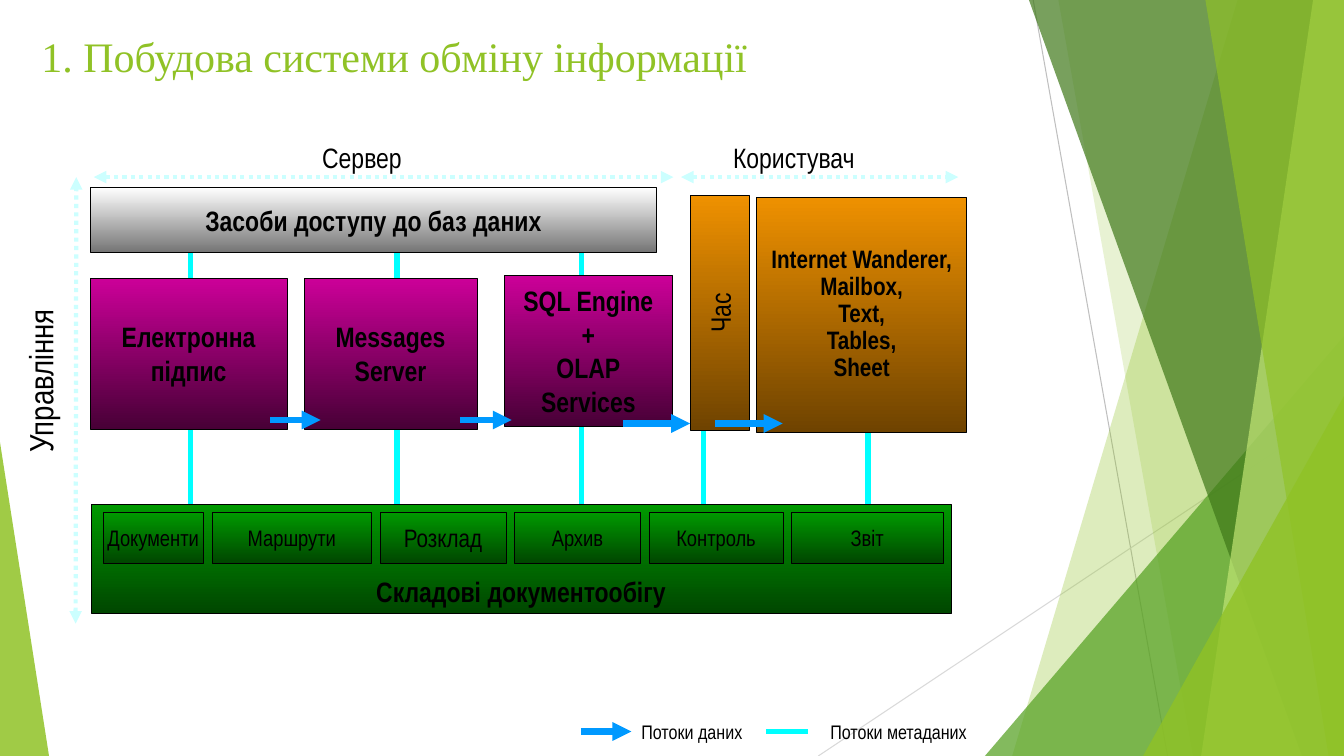
from lxml import etree
from pptx import Presentation
from pptx.dml.color import RGBColor
from pptx.enum.dml import MSO_LINE
from pptx.enum.shapes import MSO_CONNECTOR, MSO_SHAPE
from pptx.enum.text import MSO_ANCHOR, MSO_AUTO_SIZE, PP_ALIGN
from pptx.oxml.ns import qn
from pptx.util import Pt

RECTANGLE = MSO_SHAPE.RECTANGLE
TRIANGLE = MSO_SHAPE.ISOSCELES_TRIANGLE
STRAIGHT = MSO_CONNECTOR.STRAIGHT
DOTTED = MSO_LINE.ROUND_DOT
TOP, MIDDLE, BOTTOM = MSO_ANCHOR.TOP, MSO_ANCHOR.MIDDLE, MSO_ANCHOR.BOTTOM
LEFT, CENTER = PP_ALIGN.LEFT, PP_ALIGN.CENTER
GROW = MSO_AUTO_SIZE.SHAPE_TO_FIT_TEXT

WIDTH, HEIGHT = 960, 540
COLORS = {
    "black": "000000", "lime": "90C226", "leaf": "54A021",
    "forest": "3F7819", "pale": "C0E474", "rule": "BFBFBF",
    "light_rule": "D9D9D9", "data": "0099FF", "metadata": "00FFFF",
    "span": "CCFFFF",
}
GRADIENTS = {
    "green": ("009900", "004700"),
    "gray": ("FFFFFF", "767676"),
    "magenta": ("CC0099", "480036"),
    "orange": ("EF9100", "6F4300"),
}


class Diagram:
    font = "Arial Narrow"

    def __init__(self, page):
        self.page = page
        self.shapes = page.shapes

    def color(self, name):
        return RGBColor.from_string(COLORS[name])

    def tint(self, shape, color, opacity):
        shape.shadow.inherit = False
        shape.line.fill.background()
        shape.fill.solid()
        shape.fill.fore_color.rgb = self.color(color)
        for node in shape._element.spPr.iter(qn("a:srgbClr")):
            etree.SubElement(node, qn("a:alpha"), val=str(opacity * 1000))

    def wedge(self, top_x, bottom_x, color, opacity):
        builder = self.shapes.build_freeform(Pt(top_x), 0)
        corners = [(WIDTH, 0), (WIDTH, HEIGHT), (bottom_x, HEIGHT)]
        builder.add_line_segments([(Pt(x), Pt(y)) for x, y in corners])
        self.tint(builder.convert_to_shape(), color, opacity)

    def triangle(self, left, top, width, apex, color, opacity):
        shape = self.shapes.add_shape(
            TRIANGLE, Pt(left), Pt(top), Pt(width), Pt(HEIGHT - top))
        shape.adjustments[0] = apex
        self.tint(shape, color, opacity)

    def line(self, start, end, color, weight, head=None, tail=None, dotted=False):
        line = self.shapes.add_connector(STRAIGHT, *map(Pt, start + end))
        line.line.color.rgb = self.color(color)
        line.line.width = Pt(weight)
        if dotted:
            line.line.dash_style = DOTTED
        outline = line._element.spPr.find(qn("a:ln"))
        for tag, kind in (("a:headEnd", head), ("a:tailEnd", tail)):
            if kind:
                etree.SubElement(outline, qn(tag), type=kind)
        etree.SubElement(line._element.spPr, qn("a:effectLst"))

    def add_text(self, shape, lines, size, align, anchor, color="black",
                 bold=False, font=None, wrap=True, spacing=None):
        frame = shape.text_frame
        frame.word_wrap = wrap
        frame.vertical_anchor = anchor
        for index, text in enumerate(lines):
            para = frame.paragraphs[0] if index == 0 else frame.add_paragraph()
            para.alignment = align
            if spacing:
                para.line_spacing = spacing
            span = para.add_run()
            span.text = text
            span.font.name = font or self.font
            span.font.size = Pt(size)
            span.font.bold = bold
            span.font.color.rgb = self.color(color)

    def box(self, bounds, gradient, lines, size=20, bold=True, anchor=MIDDLE,
            wrap=False, spacing=None, rotation=0):
        shape = self.shapes.add_shape(RECTANGLE, *map(Pt, bounds))
        shape.shadow.inherit = False
        shape.rotation = rotation
        shape.fill.gradient()
        shape.fill.gradient_angle = 180 if rotation else 270
        for position, (stop, shade) in enumerate(
                zip(shape.fill.gradient_stops, GRADIENTS[gradient])):
            stop.position = position
            stop.color.rgb = RGBColor.from_string(shade)
        shape.line.color.rgb = self.color("black")
        shape.line.width = Pt(0.25)
        self.add_text(shape, lines, size, CENTER, anchor, bold=bold, wrap=wrap,
                      spacing=spacing)

    def label(self, bounds, text, size, rotation=0):
        box = self.shapes.add_textbox(*map(Pt, bounds))
        box.rotation = rotation
        self.add_text(box, [text], size, LEFT, TOP)
        box.text_frame.auto_size = GROW

    def title(self, bounds, text):
        box = self.shapes.add_textbox(*map(Pt, bounds))
        self.add_text(box, [text], 30, LEFT, MIDDLE, "lime", font="Times New Roman")


def draw_backdrop(diagram):
    diagram.line((738, 0), (834, HEIGHT), "rule", 0.75)
    diagram.line((WIDTH, 290), (584.5, HEIGHT), "light_rule", 0.75)
    diagram.wedge(884, 723, "lime", 30)
    diagram.wedge(756, 852, "lime", 20)
    diagram.triangle(703.5, 240, 256.5, 1, "leaf", 72)
    diagram.wedge(735, 930, "forest", 70)
    diagram.wedge(938, 858, "pale", 70)
    diagram.wedge(861, 949, "lime", 65)
    diagram.triangle(816.5, 283, 143.5, 1, "lime", 80)
    diagram.triangle(0, 316, 35, 0, "lime", 85)


def draw_document_flow(diagram):
    diagram.line((502.5, 288), (502.5, 378), "metadata", 3, head="arrow")
    for x, top, bottom in ((620, 306, 425), (283.5, 174, 414),
                           (415.5, 180, 414), (136, 168, 407)):
        diagram.line((x, top), (x, bottom), "metadata", 4)
    diagram.box((65, 360, 614.5, 78), "green", ["Складові документообігу"],
                anchor=BOTTOM)
    left, gap = 73.5, 6
    for name, width, size in (("Документи", 72, 16), ("Маршрути", 114, 16),
                              ("Розклад", 90, 18), ("Архив", 90, 16),
                              ("Контроль", 96, 16), ("Звіт", 108, 16)):
        diagram.box((left, 366, width, 36), "green", [name], size, bold=False)
        left += width + gap


def draw_systems(diagram):
    diagram.box((64.5, 134, 404.5, 46), "gray", ["Засоби доступу до баз даних"])
    diagram.box((360, 196.5, 120.5, 108), "magenta",
                ["SQL Engine", "+", "OLAP", "Services"], wrap=True)
    diagram.box((217, 198.5, 124, 108), "magenta", ["Messages", "Server"])
    diagram.box((64.5, 198.5, 140.5, 108), "magenta", ["Електронна", "підпис"])
    diagram.box((430, 202, 168, 42.5), "orange", ["Час"], bold=False,
                wrap=True, rotation=270)
    diagram.box((540.5, 140.5, 150, 168), "orange",
                ["Internet Wanderer,", "Mailbox,", "Text,", "Tables,", "Sheet"],
                18, wrap=True, spacing=0.9)
    for start, end, y in ((193, 229, 300), (328.5, 365.5, 300),
                          (445, 493, 302.5), (511, 559, 302.5)):
        diagram.line((start, y), (end, y), "data", 4.5, tail="triangle")


def draw_labels(diagram):
    for start, end in (((67, 126.5), (481, 126.5)),
                       ((486.5, 126.5), (684.5, 126.5)),
                       ((54, 445.5), (54.5, 126.5))):
        diagram.line(start, end, "span", 3, "triangle", "triangle", True)
    diagram.label((223, 96.5, 120, 31), "Сервер", 20)
    diagram.label((516.5, 96.5, 137, 31), "Користувач", 20)
    diagram.label((-60.5, 223, 178, 36), "Управління", 24, rotation=270)
    diagram.line((415, 522.5), (451, 522.5), "data", 4.5, tail="triangle")
    diagram.label((451, 510.5, 96, 24), "Потоки даних", 14)
    diagram.line((577, 522.5), (547, 522.5), "metadata", 4)
    diagram.label((586, 510.5, 276.5, 24), "Потоки метаданих", 14)


def main():
    deck = Presentation()
    deck.slide_width, deck.slide_height = Pt(WIDTH), Pt(HEIGHT)
    diagram = Diagram(deck.slides.add_slide(deck.slide_layouts[6]))
    draw_backdrop(diagram)
    diagram.title((22.5, 16, 715, 47), "1. Побудова системи обміну інформації")
    draw_document_flow(diagram)
    draw_systems(diagram)
    draw_labels(diagram)
    deck.save("out.pptx")


if __name__ == "__main__":
    main()
